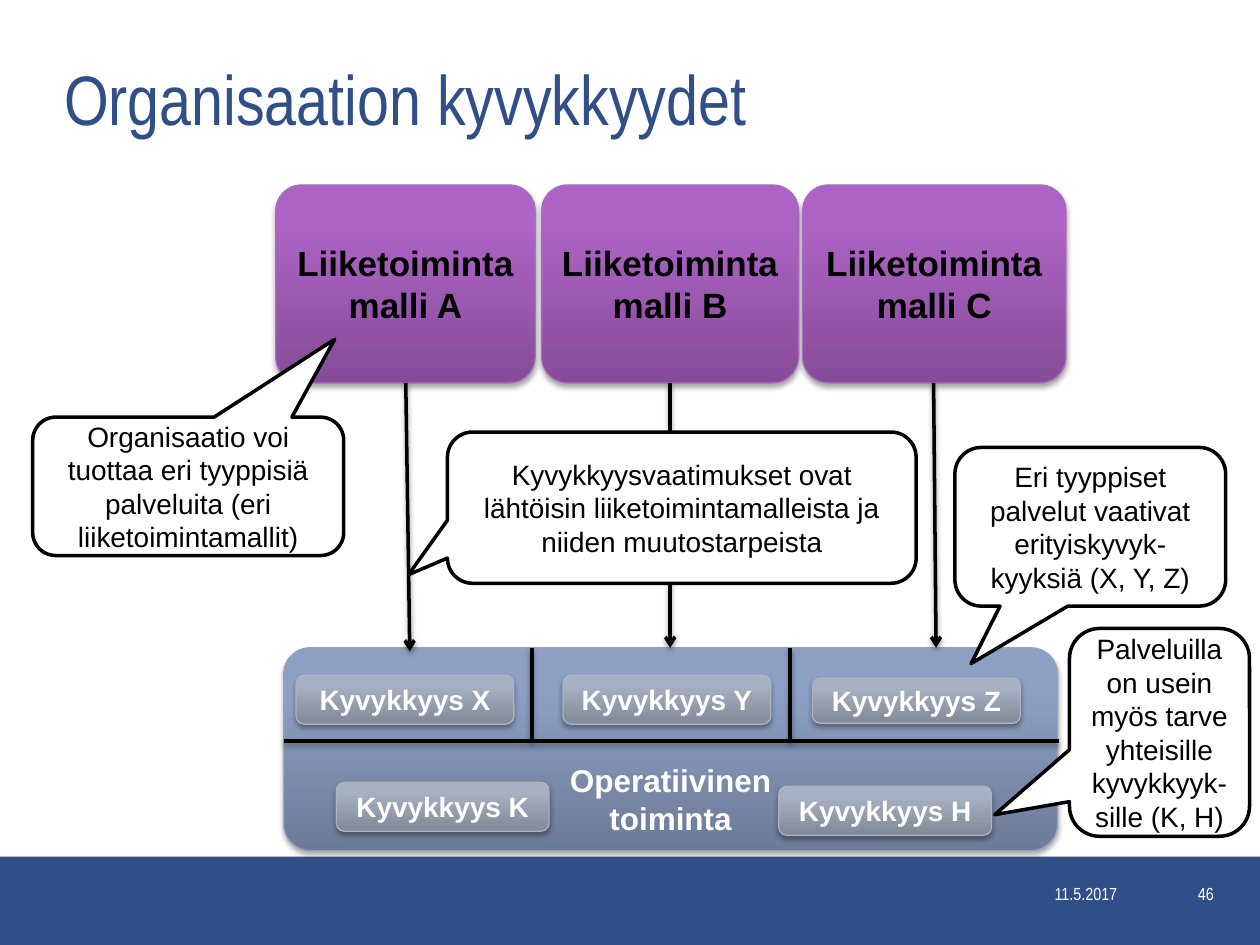
"""Build the slide on an organisation's capabilities and business models."""
from copy import deepcopy
from typing import NamedTuple

from lxml import etree
from pptx import Presentation
from pptx.dml.color import RGBColor
from pptx.enum.shapes import MSO_CONNECTOR, MSO_SHAPE
from pptx.enum.text import MSO_ANCHOR, PP_ALIGN
from pptx.oxml.ns import qn
from pptx.util import Cm, Pt

RECTANGLE, ROUNDED = MSO_SHAPE.RECTANGLE, MSO_SHAPE.ROUNDED_RECTANGLE
CALLOUT, STRAIGHT = MSO_SHAPE.ROUNDED_RECTANGULAR_CALLOUT, MSO_CONNECTOR.STRAIGHT
MIDDLE, BOTTOM = MSO_ANCHOR.MIDDLE, MSO_ANCHOR.BOTTOM
LEFT, CENTER, RIGHT = PP_ALIGN.LEFT, PP_ALIGN.CENTER, PP_ALIGN.RIGHT
NAVY = RGBColor(0x30, 0x4E, 0x88)
BLACK = RGBColor(0, 0, 0)
WHITE = RGBColor(0xFF, 0xFF, 0xFF)
GRADIENT_POSITIONS = (0, 0.8, 1)


class Box(NamedTuple):
    left: float
    top: float
    width: float
    height: float


class TextStyle(NamedTuple):
    size: float
    color: RGBColor
    bold: bool = False
    font: str = "Arial"
    align: PP_ALIGN = CENTER
    anchor: MSO_ANCHOR = MIDDLE


class BlockStyle(NamedTuple):
    gradient: tuple[RGBColor, RGBColor, RGBColor]
    outline: RGBColor
    rounding: float
    text: TextStyle


class Block(NamedTuple):
    box: Box
    lines: tuple[str, ...]
    style: BlockStyle


class Callout(NamedTuple):
    box: Box
    pointer: tuple[float, float]
    text: str


class Line(NamedTuple):
    start: tuple[float, float]
    end: tuple[float, float]
    arrow: bool = False


MODEL = BlockStyle(
    (RGBColor(0x86, 0x4C, 0x98), RGBColor(0xAD, 0x63, 0xC5), RGBColor(0xAF, 0x62, 0xC8)),
    RGBColor(0xAA, 0x6E, 0xBE), 0.131, TextStyle(20, BLACK, True))
OPERATIONS = BlockStyle(
    (RGBColor(0x6C, 0x7B, 0x97), RGBColor(0x8D, 0xA0, 0xC4), RGBColor(0x8C, 0xA0, 0xC6)),
    RGBColor(0x94, 0xA3, 0xC1), 0.131, TextStyle(18, WHITE, True, anchor=BOTTOM))
CAPABILITY = BlockStyle(
    (RGBColor(0x81, 0x89, 0x97), RGBColor(0xA7, 0xB1, 0xC4), RGBColor(0xA7, 0xB2, 0xC6)),
    RGBColor(0xAC, 0xB4, 0xC3), 0.167, TextStyle(16, WHITE, True))
REMARK = TextStyle(16, BLACK)
TITLE = TextStyle(40, NAVY, font="Arial Narrow")
DATE = TextStyle(10, WHITE, font="Arial Narrow", align=LEFT)
PAGE_NUMBER = DATE._replace(align=RIGHT)

MODELS = [Block(Box(left, 3.73, width, 3.99), (f"Liiketoimintamalli {letter}",), MODEL)
          for letter, left, width in (("A", 5.56, 5.23), ("B", 10.92, 5.18), ("C", 16.18, 5.31))]
OPERATIONS_PANEL = Block(Box(5.72, 13.06, 15.6, 4.09), ("Operatiivinen", "toiminta"), OPERATIONS)
CAPABILITIES = [Block(box, (f"Kyvykkyys {letter}",), CAPABILITY) for letter, box in (
    ("X", Box(5.97, 13.61, 4.39, 0.99)),
    ("Y", Box(11.35, 13.61, 4.19, 0.99)),
    ("Z", Box(16.38, 13.67, 4.19, 0.91)),
    ("K", Box(6.78, 15.77, 4.29, 0.99)),
    ("H", Box(15.7, 15.85, 4.29, 0.99)),
)]
LINES = [
    Line((8.18, 7.72), (8.26, 13.13), True),
    Line((13.51, 7.72), (13.51, 13.06), True),
    Line((18.82, 7.72), (18.87, 13.06), True),
    Line((5.72, 14.94), (21.34, 14.94)),
    Line((10.72, 13.06), (10.72, 14.94)),
    Line((15.93, 13.06), (15.93, 14.94)),
]
CALLOUTS = [
    Callout(Box(9.02, 8.71, 9.45, 3.05), (-0.583, 0.443),
            "Kyvykkyysvaatimukset ovat lähtöisin liiketoimintamalleista ja niiden muutostarpeista"),
    Callout(Box(0.66, 8.41, 6.27, 2.79), (0.471, -1.063),
            "Organisaatio voi tuottaa eri tyyppisiä palveluita (eri liiketoimintamallit)"),
    Callout(Box(21.56, 12.67, 3.63, 4.19), (-0.915, 0.396),
            "Palveluilla on usein myös tarve yhteisille kyvykkyyk-sille (K, H)"),
    Callout(Box(19.25, 9.02, 5.46, 3.2), (-0.44, 0.862),
            "Eri tyyppiset palvelut vaativat erityiskyvyk-kyyksiä (X, Y, Z)"),
]


def lengths(box: Box) -> list[Cm]:
    return [Cm(value) for value in box]


def write(shape, lines: tuple[str, ...], style: TextStyle) -> None:
    frame = shape.text_frame
    frame.word_wrap = True
    frame.vertical_anchor = style.anchor
    for index, line in enumerate(lines):
        paragraph = frame.add_paragraph() if index else frame.paragraphs[0]
        paragraph.alignment = style.align
        run = paragraph.add_run()
        run.text = line
        run.font.name = style.font
        run.font.size = Pt(style.size)
        run.font.bold = style.bold
        run.font.color.rgb = style.color


def add_shadow(effects, opacity: int, distance: float) -> None:
    shadow = etree.SubElement(effects, qn("a:outerShdw"), blurRad=str(Pt(3.1)),
                              dist=str(Pt(distance)), dir="5400000", rotWithShape="0")
    color = etree.SubElement(shadow, qn("a:srgbClr"), val=str(BLACK))
    etree.SubElement(color, qn("a:alpha"), val=str(opacity * 1000))


def fill_gradient(shape, colors: tuple[RGBColor, ...]) -> None:
    shape.fill.gradient()
    shape.fill.gradient_angle = 90
    stop_list = shape.element.spPr.find(f".//{qn('a:gsLst')}")
    stop_list.append(deepcopy(stop_list[-1]))
    for stop, position, color in zip(shape.fill.gradient_stops, GRADIENT_POSITIONS, colors):
        stop.position = position
        stop.color.rgb = color


def draw_block(slide, block: Block) -> None:
    shape = slide.shapes.add_shape(ROUNDED, *lengths(block.box))
    shape.adjustments[0] = block.style.rounding
    fill_gradient(shape, block.style.gradient)
    shape.line.color.rgb = block.style.outline
    shape.line.width = Pt(0.75)
    shape.shadow.inherit = False
    add_shadow(shape.element.spPr.find(qn("a:effectLst")), 35, 1.8)
    write(shape, block.lines, block.style.text)


def draw_line(slide, line: Line) -> None:
    connector = slide.shapes.add_connector(
        STRAIGHT, *(Cm(value) for value in line.start + line.end))
    connector.line.color.rgb = BLACK
    connector.line.width = Pt(2)
    properties = connector.element.spPr
    if line.arrow:
        etree.SubElement(properties.find(qn("a:ln")), qn("a:tailEnd"), type="arrow")
    add_shadow(etree.SubElement(properties, qn("a:effectLst")), 38, 1.6)


def draw_callout(slide, callout: Callout) -> None:
    shape = slide.shapes.add_shape(CALLOUT, *lengths(callout.box))
    for index, value in enumerate((*callout.pointer, 0.167)):
        shape.adjustments[index] = value
    shape.fill.solid()
    shape.fill.fore_color.rgb = WHITE
    shape.line.color.rgb = BLACK
    shape.line.width = Pt(2)
    shape.shadow.inherit = False
    write(shape, (callout.text,), REMARK)


def draw_label(slide, box: Box, text: str, style: TextStyle) -> None:
    write(slide.shapes.add_textbox(*lengths(box)), (text,), style)


def draw_footer(slide) -> None:
    band = slide.shapes.add_shape(RECTANGLE, *lengths(Box(0, 17.27, 25.4, 1.78)))
    band.fill.solid()
    band.fill.fore_color.rgb = NAVY
    band.line.fill.background()
    band.shadow.inherit = False
    draw_label(slide, Box(21.01, 17.7, 2.36, 0.61), "11.5.2017", DATE)
    draw_label(slide, Box(23.37, 17.7, 1.35, 0.61), "46", PAGE_NUMBER)


def main() -> None:
    presentation = Presentation()
    presentation.slide_width, presentation.slide_height = Cm(25.4), Cm(19.05)
    slide = presentation.slides.add_slide(presentation.slide_layouts[6])
    draw_footer(slide)
    draw_label(slide, Box(0.51, 0.58, 15.32, 2.79), "Organisaation kyvykkyydet", TITLE)
    for block in (*MODELS, OPERATIONS_PANEL):
        draw_block(slide, block)
    for line in LINES:
        draw_line(slide, line)
    for capability in CAPABILITIES:
        draw_block(slide, capability)
    for callout in CALLOUTS:
        draw_callout(slide, callout)
    presentation.save("out.pptx")


if __name__ == "__main__":
    main()
